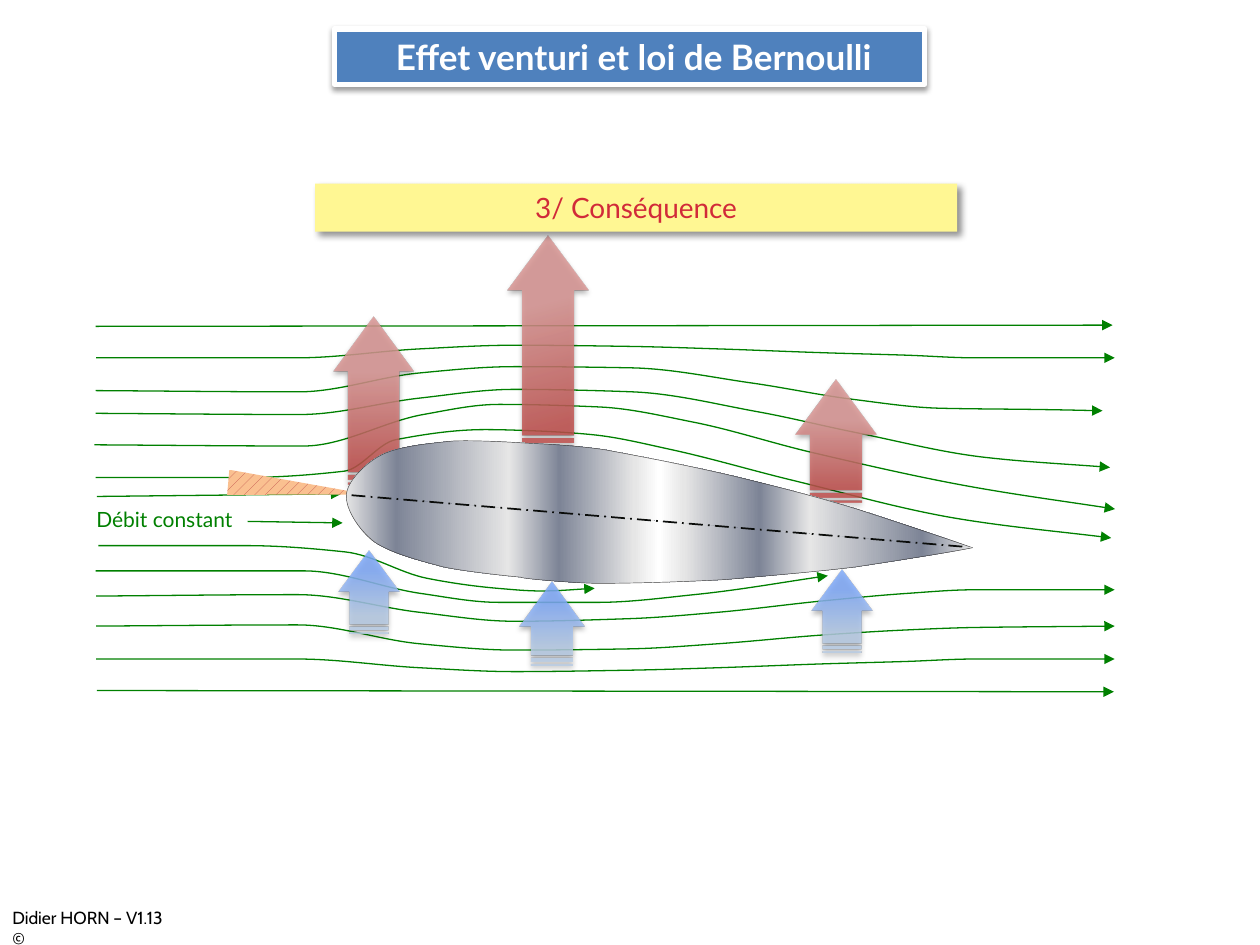
from lxml.etree import SubElement
from pptx import Presentation
from pptx.dml.color import RGBColor
from pptx.enum.dml import MSO_LINE, MSO_PATTERN
from pptx.enum.shapes import MSO_CONNECTOR, MSO_SHAPE
from pptx.enum.text import MSO_ANCHOR, PP_ALIGN
from pptx.oxml.ns import qn
from pptx.util import Pt

WHITE = RGBColor(0xFF, 0xFF, 0xFF)
BLACK = RGBColor(0, 0, 0)
GREEN = RGBColor(0, 0x80, 0)
BLUE = RGBColor(0x4F, 0x81, 0xBD)
YELLOW = RGBColor(0xFF, 0xF7, 0x93)
CRIMSON = RGBColor(0xD1, 0x2A, 0x39)
BRICK = RGBColor(0xC0, 0x50, 0x4D)
PINK = RGBColor(0xD9, 0x96, 0x94)
PALE_BLUE = RGBColor(0xB9, 0xCD, 0xE5)
SKY = RGBColor(0x80, 0xAA, 0xF9)
ORANGE = RGBColor(0xFA, 0xC0, 0x90)
OUTLINE = RGBColor(0x40, 0x40, 0x40)
CHORD = RGBColor(0x0A, 0x0C, 0x0A)
SILVER = RGBColor(0xE6, 0xE6, 0xE6)
STEEL = RGBColor(0x7D, 0x84, 0x96)

METAL = [(0, SILVER), (8, STEEL), (26, SILVER), (34, STEEL), (46, SILVER), (50, WHITE),
         (54, SILVER), (66, STEEL), (74, SILVER), (92, STEEL), (100, SILVER)]
SUCTION = [(12, BRICK), (67, PINK)]
PRESSURE = [(20, PALE_BLUE), (75, SKY)]

# Points below are relative to the diagram box
STRAIGHT_FLOWS = [(0.7, 56.5, 581.8, 55.8), (1.4, 153.7, 141.1, 152.2),
                  (2.2, 166.6, 141.8, 168.8), (1.4, 264.6, 582.5, 265.3)]
STATIONS = (1, 116, 186, 240, 306, 356, 416, 464, 503, 583)
CURVED_FLOWS = [
    # above the aerofoil
    (STATIONS, (74.5, 74.5, 69.4, 67.3, 68, 69.4, 71.6, 73, 74.5, 74.5)),
    ((0.7, 116.6, 185.8, 239.8, 306.7, 375.8, 433.4, 483.8, 539.3, 576),
     (93.2, 93.9, 83.1, 79.5, 80.2, 88.9, 98.2, 103.3, 104, 104.7)),
    ((0.7, 117.4, 185.8, 239.8, 306.7, 379.4, 434.2, 509, 580.3),
     (106.2, 106.9, 97.5, 92.5, 93.9, 105.4, 117, 131.4, 137.1)),
    ((0, 119.5, 187.9, 231.1, 288.7, 342, 409.7, 499.7, 583.2),
     (124.2, 124.9, 106.9, 101.1, 102.6, 111.2, 128.5, 147.9, 160.9)),
    ((0.7, 85, 142.6, 172.1, 223.2, 250.6, 284.4, 329.8, 398.2, 494.6, 581),
     (142.9, 142.9, 139.3, 121.3, 115.5, 116.2, 118.4, 127, 144.3, 166.6, 177.4)),
    # below the aerofoil
    ((2.2, 86.4, 143.3, 190.1, 230.4, 254.9, 285.8),
     (181.8, 181.8, 185.4, 200.5, 206.2, 207.7, 206.2)),
    ((0.7, 119.5, 186.5, 231.1, 287.3, 342.7, 419),
     (196.2, 196.2, 209.1, 214.2, 214.2, 209.8, 199)),
    (STATIONS, (210.6, 209.8, 219.9, 225, 223.5, 219.9, 213.4, 209.1, 207, 207)),
    (STATIONS, (227.8, 227.1, 237.9, 241.5, 240.8, 237.9, 232.9, 230, 228.6, 227.8)),
    (STATIONS, (246.6, 246.6, 251.6, 253.8, 253, 251.6, 249.4, 248, 246.6, 246.6)),
]
UPPER_SKIN = [
    (144, 153), (144, 145.8), (154.1, 135), (164.2, 129.9), (174.2, 124.9), (191.5, 123.4),
    (205.2, 122), (219.6, 121.3), (249.1, 123.4), (249.8, 123.4), (249.8, 123.4),
    (272.9, 124.2), (291.6, 127), (311, 130.6), (341.3, 136.4), (365.8, 142.2),
    (389.5, 147.9), (414.7, 154.4), (437.8, 161.6), (460.1, 168.8), (490.3, 178.9), (501.8, 183)]
LOWER_SKIN = [
    (144, 153), (143.3, 160.2), (150.5, 172.4), (159.8, 179.6), (169.2, 186.1), (185.8, 190.4),
    (199.4, 194), (213.1, 196.9), (242.6, 199.8), (243.4, 199.8), (243.4, 200.5),
    (265.7, 202.6), (285.8, 203.4), (305.3, 203.4), (335.5, 202.6), (360.7, 201.2),
    (385.2, 199), (411.1, 196.9), (434.9, 194), (458.6, 190.4), (490.3, 185.4), (501.8, 183)]


def add_shadow(shape, opacity, blur, distance, angle):
    shape.shadow.inherit = False
    effects = shape.element.spPr.find(qn("a:effectLst"))
    shadow = SubElement(effects, qn("a:outerShdw"), blurRad=str(Pt(blur)),
                        dist=str(Pt(distance)), dir=str(angle * 60000), rotWithShape="0")
    color = SubElement(shadow, qn("a:srgbClr"), val=str(BLACK))
    SubElement(color, qn("a:alpha"), val=str(opacity * 1000))


def fill_gradient(shape, stops, angle=0, opacity=100):
    shape.fill.gradient()
    shape.fill.gradient_angle = angle
    stop_list = shape.element.spPr.find(".//" + qn("a:gsLst"))
    for old_stop in list(stop_list):
        stop_list.remove(old_stop)
    for position, rgb in stops:
        stop = SubElement(stop_list, qn("a:gs"), pos=str(position * 1000))
        color = SubElement(stop, qn("a:srgbClr"), val=str(rgb))
        SubElement(color, qn("a:alpha"), val=str(opacity * 1000))


def set_text(shape, text, size, color, font="Lato", align=PP_ALIGN.LEFT, bold=False):
    frame = shape.text_frame
    frame.word_wrap = True
    frame.vertical_anchor = MSO_ANCHOR.MIDDLE
    frame.margin_top = frame.margin_bottom = 0
    para = frame.paragraphs[0]
    para.text, para.alignment = text, align
    para.font.name, para.font.size, para.font.bold = font, Pt(size), bold
    para.font.color.rgb = color


def add_preset(page, kind, left, top, width, height):
    shape = page.shapes.add_shape(kind, Pt(left), Pt(top), Pt(width), Pt(height))
    shape.shadow.inherit = False
    shape.line.fill.background()
    return shape


def add_line(page, box, x1, y1, x2, y2, color, width):
    left, top = box
    line = page.shapes.add_connector(MSO_CONNECTOR.STRAIGHT, Pt(left + x1), Pt(top + y1),
                                     Pt(left + x2), Pt(top + y2))
    SubElement(line.element.spPr, qn("a:effectLst"))
    line.line.color.rgb, line.line.width = color, Pt(width)
    return line


def add_curve(page, box, points, color, width):
    """Draw a Bézier path: a start, then two handles and an end per segment."""
    left, top = box
    start, *others = [(Pt(left + x), Pt(top + y)) for x, y in points]
    builder = page.shapes.build_freeform(*start)
    builder.add_line_segments(others, close=False)
    curve = builder.convert_to_shape()
    outline = curve.element.spPr.find(".//" + qn("a:path"))
    steps = outline.findall(qn("a:lnTo"))
    for first in range(0, len(steps), 3):
        segment = SubElement(outline, qn("a:cubicBezTo"))
        for step in steps[first:first + 3]:
            segment.append(step[0])
            outline.remove(step)
    curve.shadow.inherit = False
    curve.line.color.rgb, curve.line.width = color, Pt(width)
    return curve


def smooth(xs, ys):
    """Bézier points of a curve through the knots, without overshoot."""
    knots = list(zip(xs, ys))
    rises = [(y2 - y1) / (x2 - x1) for (x1, y1), (x2, y2) in zip(knots, knots[1:])]
    inner = [2 * a * b / (a + b) if a * b > 0 else 0 for a, b in zip(rises, rises[1:])]
    slopes = [rises[0], *inner, rises[-1]]
    points = knots[:1]
    for i, ((x1, y1), (x2, y2)) in enumerate(zip(knots, knots[1:])):
        third = (x2 - x1) / 3
        points += [(x1 + third, y1 + third * slopes[i]),
                   (x2 - third, y2 - third * slopes[i + 1]), (x2, y2)]
    return points


def add_title(page, left, top, width, height):
    title = page.shapes.title
    title.left, title.top, title.width, title.height = map(Pt, (left, top, width, height))
    title.fill.solid()
    title.fill.fore_color.rgb = BLUE
    title.line.color.rgb, title.line.width = WHITE, Pt(3)
    add_shadow(title, 38, 3.1, 1.6, 90)
    set_text(title, "Effet venturi et loi de Bernoulli", 20, WHITE, align=PP_ALIGN.CENTER, bold=True)
    title.text_frame.margin_left = Pt(12.2)


def add_label(page, left, top, width, height, fill, text, size, color, align=PP_ALIGN.LEFT):
    label = add_preset(page, MSO_SHAPE.RECTANGLE, left, top, width, height)
    label.fill.solid()
    label.fill.fore_color.rgb = fill
    set_text(label, text, size, color, align=align)
    return label


def add_flow(page, box):
    flows = [add_line(page, box, *ends, GREEN, 0.75) for ends in STRAIGHT_FLOWS]
    for xs, ys in CURVED_FLOWS:
        curve = add_curve(page, box, smooth(xs, ys), GREEN, 0.75)
        curve.fill.background()
        flows.append(curve)
    for flow in flows:
        SubElement(flow.element.spPr.find(qn("a:ln")), qn("a:tailEnd"), type="triangle")


def add_wedge(page, box):
    wedge = add_preset(page, MSO_SHAPE.TRAPEZOID, box[0] + 104.4, box[1] + 113.4, 14.4, 70.6)
    wedge.rotation, wedge.adjustments[0] = 95, 0.44
    wedge.fill.patterned()
    wedge.fill.pattern = MSO_PATTERN.PERCENT_20
    wedge.fill.fore_color.rgb, wedge.fill.back_color.rgb = BRICK, ORANGE


def add_force(page, box, center, tip, length, breadth, stops, angle=0):
    left, top = box[0] + center - length / 2, box[1] + tip + (length - breadth) / 2
    arrow = add_preset(page, MSO_SHAPE.STRIPED_RIGHT_ARROW, left, top, length, breadth)
    arrow.rotation = 270
    arrow.adjustments[0], arrow.adjustments[1] = 0.637, 0.681
    fill_gradient(arrow, stops, angle, opacity=84)
    add_shadow(arrow, 35, 3.1, 1.8, 90)


def add_aerofoil(page, box):
    for skin in (UPPER_SKIN, LOWER_SKIN):
        fill_gradient(add_curve(page, box, skin, OUTLINE, 0.25), METAL)
    chord = add_line(page, box, 146.9, 153, 497.5, 182.5, CHORD, 1)
    chord.line.dash_style = MSO_LINE.LONG_DASH_DOT


def add_diagram(page, left, top):
    box = (left, top)
    add_flow(page, box)
    add_wedge(page, box)
    for center, tip, length, angle in [(259.2, 4.6, 121, 15), (159.5, 51, 95.8, 0), (423.7, 87, 69.8, 0)]:
        add_force(page, box, center, tip, length, 46, SUCTION, angle)
    add_aerofoil(page, box)
    for center, tip, breadth in [(157, 184.6, 34.6), (261.4, 202.6, 37.4), (427, 195.4, 34.6)]:
        add_force(page, box, center, tip, 47.5, breadth, PRESSURE)
    add_label(page, left - 6, top + 156, 93.6, 21.6, WHITE, "Débit constant", 12, GREEN)


def add_footer(page, left, top, width, height):
    footer = page.shapes.add_textbox(Pt(left), Pt(top), Pt(width), Pt(height))
    set_text(footer, "Didier HORN – V1.13 ©", 10, BLACK, font="Cabin")
    footer.text_frame.word_wrap = False


def main():
    deck = Presentation()
    deck.slide_width, deck.slide_height = Pt(720), Pt(540)
    page = deck.slides.add_slide(deck.slide_layouts[5])
    add_title(page, 191, 16.5, 337.5, 31.7)
    add_diagram(page, 54, 130)
    banner = add_label(page, 180, 105, 367, 27.4, YELLOW, "3/ Conséquence", 16, CRIMSON, PP_ALIGN.CENTER)
    add_shadow(banner, 43, 4, 3, 45)
    add_footer(page, 0, 521, 108, 19)
    deck.save("out.pptx")


if __name__ == "__main__":
    main()
